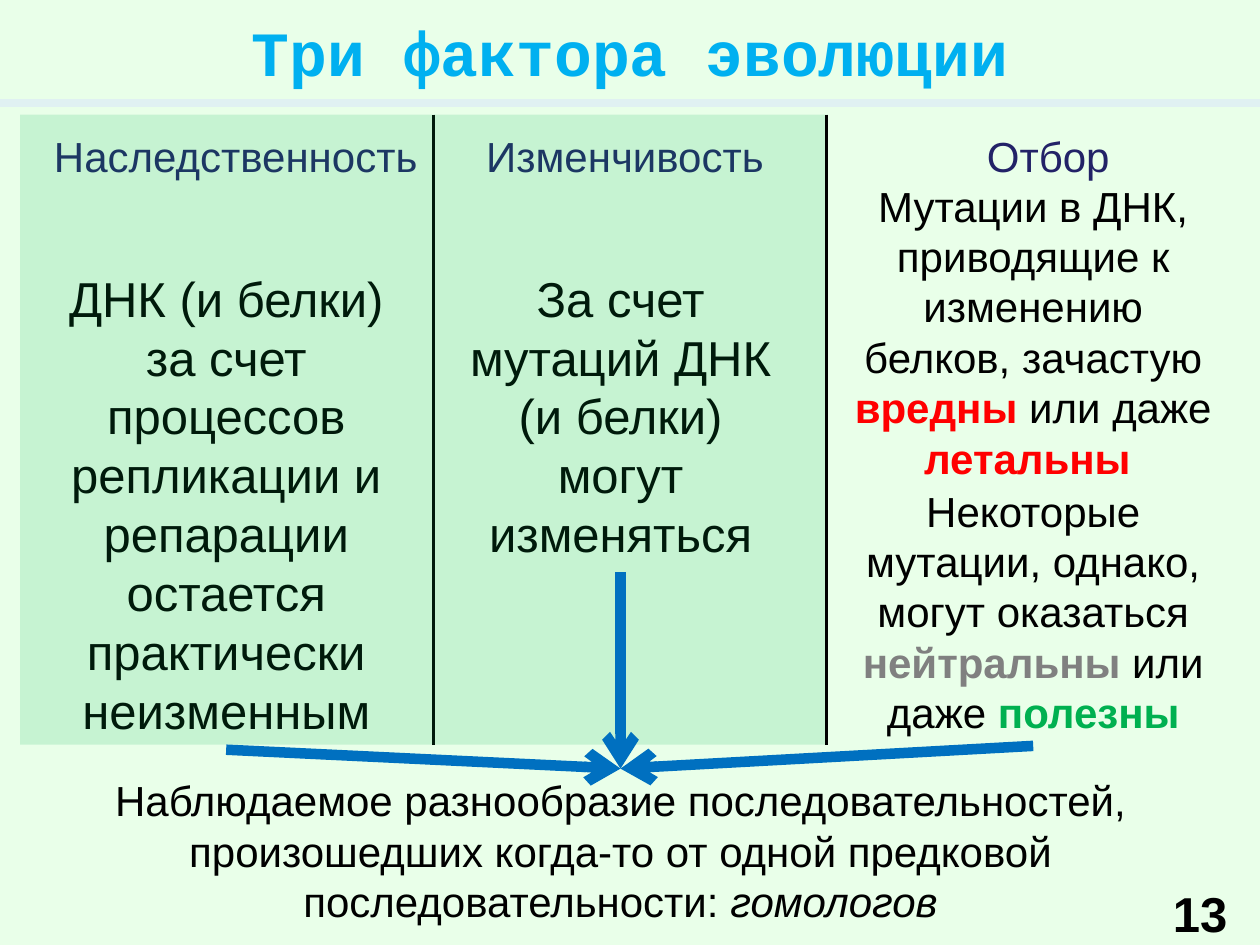
from dataclasses import dataclass

from lxml import etree
from pptx import Presentation
from pptx.dml.color import RGBColor
from pptx.enum.shapes import MSO_CONNECTOR, MSO_SHAPE
from pptx.enum.text import MSO_ANCHOR, MSO_AUTO_SIZE, PP_ALIGN
from pptx.oxml.ns import qn
from pptx.util import Inches, Pt

CENTER = PP_ALIGN.CENTER
MIDDLE, TOP = MSO_ANCHOR.MIDDLE, MSO_ANCHOR.TOP
GROW, FIXED = MSO_AUTO_SIZE.SHAPE_TO_FIT_TEXT, MSO_AUTO_SIZE.NONE
STRAIGHT = MSO_CONNECTOR.STRAIGHT
RECTANGLE = MSO_SHAPE.RECTANGLE
TOP_SIDE, BOTTOM_SIDE = 0, 2


@dataclass(frozen=True)
class Theme:
    background: str = "E9FFE9"
    title: str = "00B0F0"
    rule: str = "E0F1F2"
    heading: str = "222267"
    ink: str = "000000"
    harmful: str = "FF0000"
    neutral: str = "808080"
    useful: str = "00B050"
    arrow: str = "0070C0"
    font: str = "Arial"
    title_font: str = "Courier New"
    title_size: int = 36
    large: int = 28
    medium: int = 24


theme = Theme()


def write(box, spans, size, color=theme.ink, font=theme.font, anchor=TOP, auto_size=GROW):
    frame = box.text_frame
    frame.word_wrap = True
    frame.auto_size = auto_size
    frame.vertical_anchor = anchor
    para = frame.paragraphs[0]
    para.alignment = CENTER
    for text, changes in spans:
        span = para.add_run()
        span.text = text
        look = {"name": font, "size": Pt(size), "bold": False, "italic": False, "color": color}
        look.update(changes)
        span.font.color.rgb = RGBColor.from_string(look.pop("color"))
        for name, value in look.items():
            setattr(span.font, name, value)
    return box


def draw_line(start, end, color, width):
    line = page.shapes.add_connector(STRAIGHT, *map(Inches, start + end))
    line.line.color.rgb = RGBColor.from_string(color)
    line.line.width = Pt(width)
    etree.SubElement(line._element.spPr, qn("a:effectLst"))
    return line


deck = Presentation()
deck.slide_width, deck.slide_height = Inches(10), Inches(7.5)
page = deck.slides.add_slide(deck.slide_layouts[5])
page.background.fill.solid()
page.background.fill.fore_color.rgb = RGBColor.from_string(theme.background)

title = page.shapes.title
title.left, title.top = Inches(0), Inches(0)
title.width, title.height = Inches(10), Inches(0.82)
write(title, [("Три фактора эволюции", {"bold": True})], theme.title_size,
      theme.title, theme.title_font, MIDDLE, FIXED)
draw_line((10, 0.82), (0, 0.82), theme.rule, 4.75)

headings = [
    ("Наследственность", 0.23, 3.28),
    ("Изменчивость", 3.67, 2.58),
    ("Отбор", 7.03, 2.58),
]
for text, left, width in headings:
    box = page.shapes.add_textbox(Inches(left), Inches(0.99), Inches(width), Inches(0.51))
    write(box, [(text, {})], theme.medium, theme.heading)

texts = {
    "heredity": ((0.39, 2.08, 2.81, 3.87), theme.large, [
        ("ДНК (и белки) за счет процессов репликации и репарации "
         "остается практически неизменным", {}),
    ]),
    "variation": ((3.52, 2.08, 2.81, 2.46), theme.large, [
        ("За счет мутаций ДНК (и белки) могут изменяться", {}),
    ]),
    "harmful": ((6.64, 1.38, 3.12, 2.52), theme.medium, [
        ("Мутации в ДНК, приводящие к изменению белков, зачастую ", {}),
        ("вредны ", {"color": theme.harmful, "bold": True}),
        ("или даже ", {}),
        ("летальны ", {"color": theme.harmful, "bold": True}),
    ]),
    "selection": ((6.64, 3.8, 3.12, 2.12), theme.medium, [
        ("Некоторые мутации, однако, могут оказаться ", {}),
        ("нейтральны", {"color": theme.neutral, "bold": True}),
        (" или даже ", {}),
        ("полезны", {"color": theme.useful, "bold": True}),
    ]),
    "conclusion": ((0.63, 6.1, 8.59, 1.31), theme.medium, [
        ("Наблюдаемое разнообразие последовательностей, произошедших "
         "когда-то от одной предковой последовательности: ", {}),
        ("гомологов", {"italic": True}),
    ]),
}
boxes = {}
for name, (place, size, spans) in texts.items():
    box = page.shapes.add_textbox(*map(Inches, place))
    boxes[name] = write(box, spans, size)

draw_line((3.44, 0.91), (3.44, 5.91), theme.ink, 2)
panel = page.shapes.add_shape(RECTANGLE, Inches(0.16), Inches(0.91), Inches(6.41), Inches(5))
panel.shadow.inherit = False
panel.line.fill.background()
panel.fill.solid()
panel.fill.fore_color.rgb = RGBColor.from_string(theme.useful)
panel_color = panel._element.spPr.find(qn("a:solidFill"))[0]
etree.SubElement(panel_color, qn("a:alpha"), val="15000")
draw_line((6.56, 0.91), (6.56, 5.91), theme.ink, 2)

for factor in ("selection", "heredity", "variation"):
    arrow = draw_line((0, 0), (1, 1), theme.arrow, 6)
    arrow.begin_connect(boxes[factor], BOTTOM_SIDE)
    arrow.end_connect(boxes["conclusion"], TOP_SIDE)
    etree.SubElement(arrow.line._get_or_add_ln(), qn("a:tailEnd"), type="arrow")

number = page.shapes.add_textbox(Inches(9.13), Inches(6.96), Inches(0.79), Inches(0.54))
write(number, [("13", {"bold": True})], theme.large, auto_size=FIXED)

deck.save("out.pptx")
